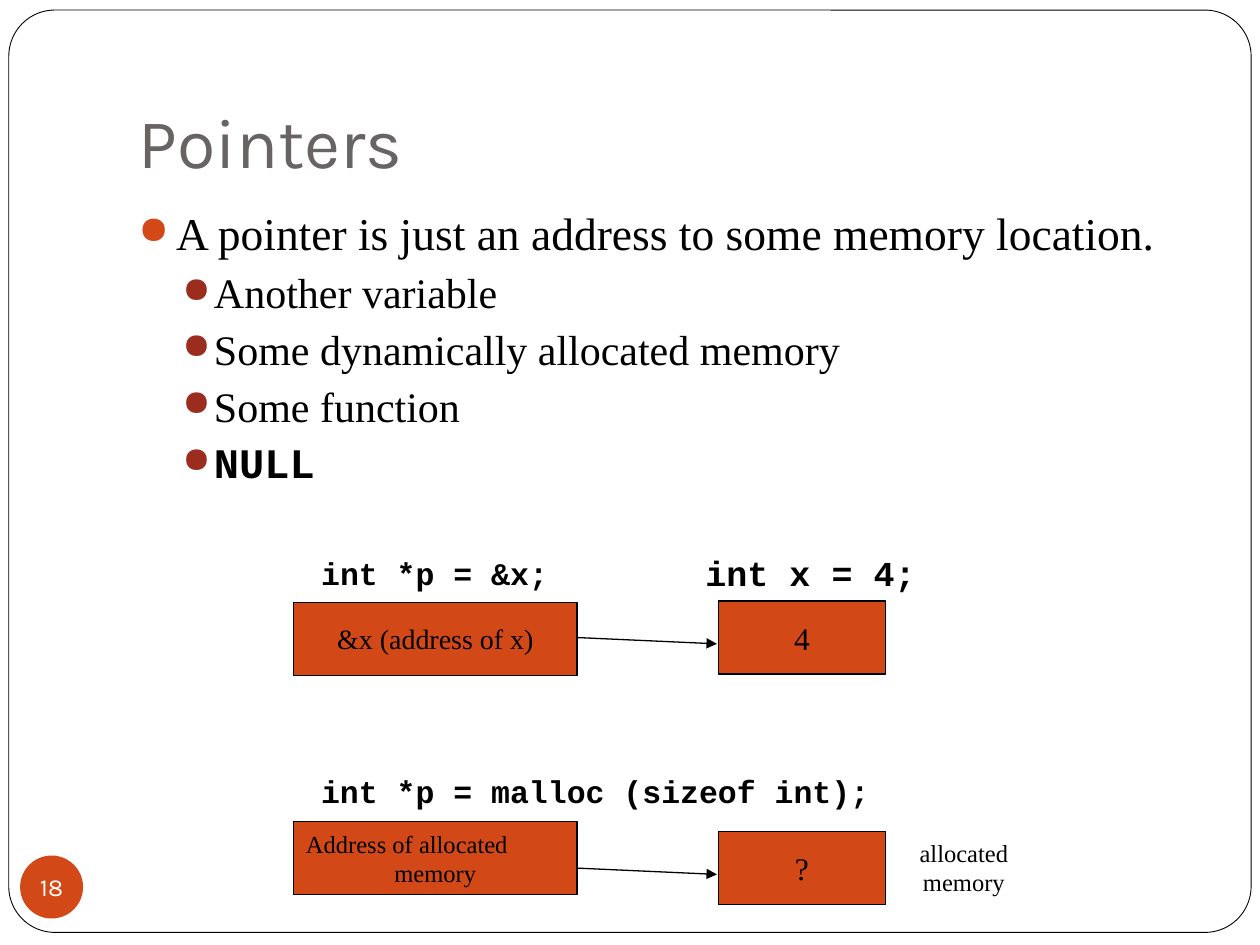
from pptx import Presentation, util as u
from pptx.dml.color import RGBColor
from pptx.enum import shapes, text
from pptx.oxml import parse_xml
from pptx.oxml.ns import nsdecls, qn

BLACK = RGBColor(0, 0, 0)
WHITE = RGBColor(255, 255, 255)
GREY = RGBColor(0x69, 0x64, 0x64)
ORANGE = RGBColor(0xD3, 0x48, 0x17)
RED = RGBColor(0x9B, 0x2D, 0x1F)
SERIF, MONO, SANS = "Times New Roman", "Courier New", "Karla"
LEFT, MID = text.PP_ALIGN.LEFT, text.PP_ALIGN.CENTER
KIND = shapes.MSO_SHAPE
COL_P, COL_X = 2.33, 5.7
WIDE, SLIM, HIGH = 2.25, 1.33, 0.58


def inch(*vals):
    return [u.Inches(v) for v in vals]


def write(par, words, size=18, font=SERIF, color=BLACK, bold=False, align=LEFT):
    par.alignment = align
    run = par.add_run()
    run.text = words
    run.font.size = u.Pt(size)
    run.font.name = font
    run.font.bold = bold
    run.font.color.rgb = color


def fill_text(frame, lines, aligns=(MID,), **form):
    """Write one paragraph for each line and its alignment."""
    for i, (line, align) in enumerate(zip(lines, aligns)):
        par = frame.add_paragraph() if i else frame.paragraphs[0]
        write(par, line, align=align, **form)


def shape(slide, kind, spot, fill, line=None):
    item = slide.shapes.add_shape(kind, *inch(*spot))
    item.shadow.inherit = False
    item.fill.solid()
    item.fill.fore_color.rgb = fill
    if line:
        item.line.color.rgb = BLACK
        item.line.width = u.Pt(line)
    else:
        item.line.fill.background()
    item.text_frame.vertical_anchor = text.MSO_ANCHOR.MIDDLE
    return item


def cell(slide, spot, lines, **form):
    """Draw a box that stands for a place in memory."""
    item = shape(slide, KIND.RECTANGLE, spot, ORANGE, 0.75)
    fill_text(item.text_frame, lines, **form)


def label(slide, spot, lines, aligns=(LEFT,), **form):
    frame = slide.shapes.add_textbox(*inch(*spot)).text_frame
    frame.word_wrap = False
    frame.auto_size = text.MSO_AUTO_SIZE.SHAPE_TO_FIT_TEXT
    fill_text(frame, lines, aligns, **form)


def arrow(slide, top):
    ends = inch(COL_P + WIDE, top, COL_X - 0.01, top + 0.05)
    item = slide.shapes.add_connector(shapes.MSO_CONNECTOR.STRAIGHT, *ends)
    item.line.color.rgb = BLACK
    item.line.width = u.Pt(0.75)
    item.line._get_or_add_ln().append(
        parse_xml(f'<a:tailEnd {nsdecls("a")} type="triangle"/>'))
    item._element.spPr.append(parse_xml(f'<a:effectLst {nsdecls("a")}/>'))


def bullet(par, level, left, hang, color):
    par.level = level
    props = par._p.get_or_add_pPr()
    props.set("marL", str(u.Inches(left)))
    props.set("indent", str(-u.Inches(hang)))
    for mark in (f'<a:buClr {nsdecls("a")}><a:srgbClr val="{color}"/></a:buClr>',
                 f'<a:buSzPct {nsdecls("a")} val="85000"/>',
                 f'<a:buChar {nsdecls("a")} char="●"/>'):
        props.append(parse_xml(mark))


def title(slide, words):
    frame = slide.shapes.add_textbox(*inch(1, 0.3, 8.5, 1.25)).text_frame
    frame.word_wrap = True
    frame.vertical_anchor = text.MSO_ANCHOR.BOTTOM
    frame.margin_bottom = u.Inches(0.1)
    write(frame.paragraphs[0], words, size=40, font=SANS, color=GREY)


def points(slide, head, subs):
    frame = slide.shapes.add_textbox(*inch(1, 1.58, 8.5, 5)).text_frame
    frame.word_wrap = True
    par = frame.paragraphs[0]
    write(par, head, size=26)
    par.space_before = u.Pt(5.8)
    bullet(par, 0, 0.3, 0.3, ORANGE)
    for words, form in subs:
        par = frame.add_paragraph()
        write(par, words, size=24, **form)
        par.space_before = u.Pt(3.7)
        bullet(par, 1, 0.6, 0.25, RED)


def badge(slide, words):
    frame = shape(slide, KIND.OVAL, (0.16, 6.79, 0.5, 0.5), ORANGE).text_frame
    frame.margin_left = frame.margin_right = 0
    frame.margin_top = frame.margin_bottom = 0
    frame.word_wrap = False
    fill_text(frame, [words], size=14, font=SANS, color=WHITE)


def main():
    deck = Presentation()
    deck.slide_width, deck.slide_height = inch(10, 7.5)
    slide = deck.slides.add_slide(deck.slide_layouts[6])

    edge = shape(slide, KIND.ROUNDED_RECTANGLE, (0.07, 0.08, 9.86, 7.32), WHITE, 0.5)
    edge.adjustments[0] = 0.05
    title(slide, "Pointers")
    badge(slide, "18")
    points(slide, "A pointer is just an address to some memory location.", [
        ("Another variable", {}),
        ("Some dynamically allocated memory", {}),
        ("Some function", {}),
        ("NULL", {"font": MONO, "bold": True}),
    ])

    code = {"font": MONO, "bold": True}
    label(slide, (2.45, 4.35, 2.01, 0.4), ["int *p = &x;"], **code)
    label(slide, (5.5, 4.33, 1.88, 0.44), ["int x = 4;"], size=20, **code)
    cell(slide, (COL_P, 4.78, WIDE, HIGH), ["&x (address of x)"], size=16)
    cell(slide, (COL_X, 4.77, SLIM, HIGH), ["4"])
    arrow(slide, 5.06)

    label(slide, (2.45, 6.08, 4.57, 0.4), ["int *p = malloc (sizeof int);"], **code)
    cell(slide, (COL_P, 6.52, WIDE, HIGH), ["Address of allocated", "memory"],
         aligns=(LEFT, MID), size=14)
    cell(slide, (COL_X, 6.6, SLIM, HIGH), ["?"])
    arrow(slide, 6.89)
    label(slide, (7.2, 6.6, 1.19, 0.57), ["allocated", "memory"], (LEFT, MID), size=14)

    deck.save("out.pptx")


if __name__ == "__main__":
    main()
